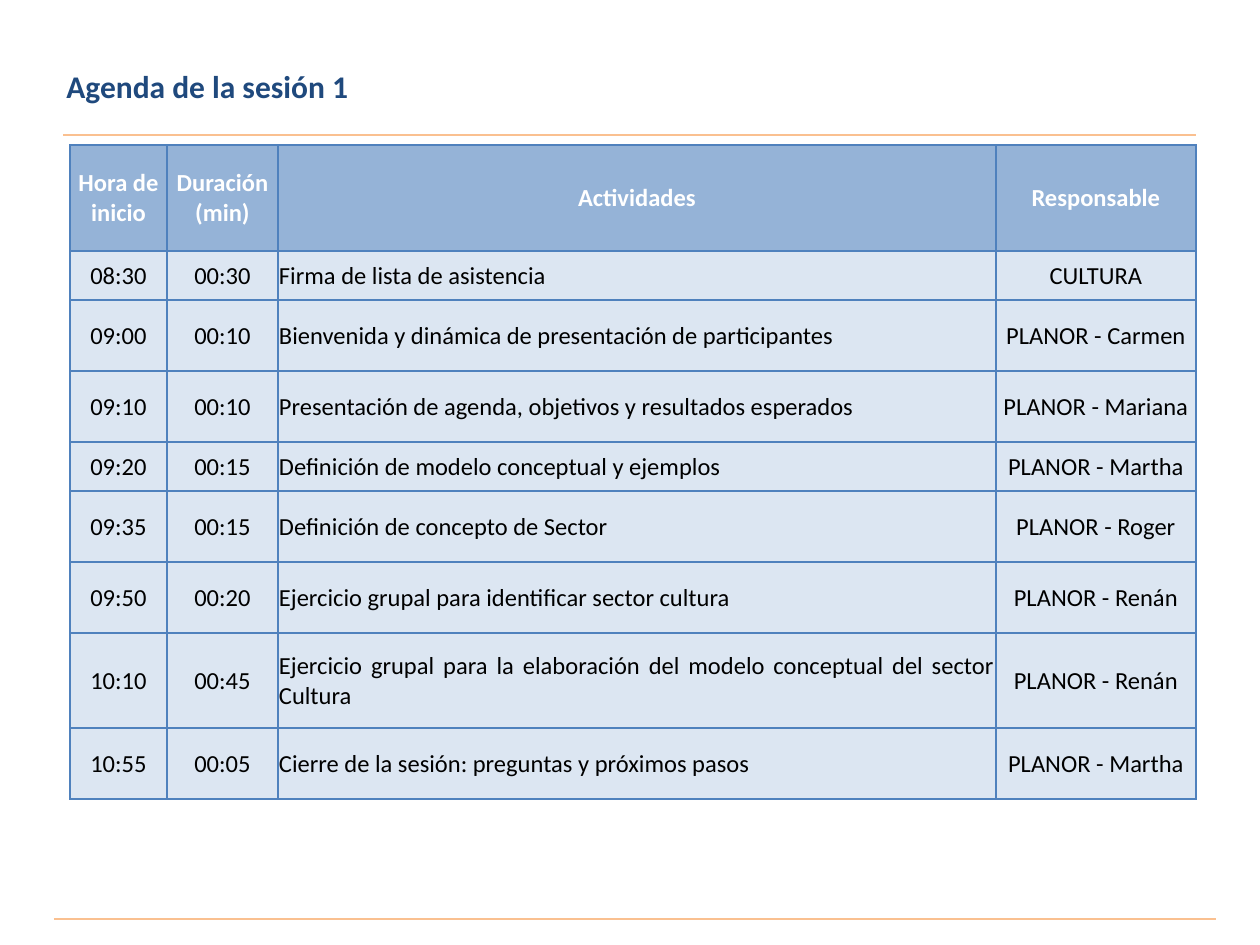
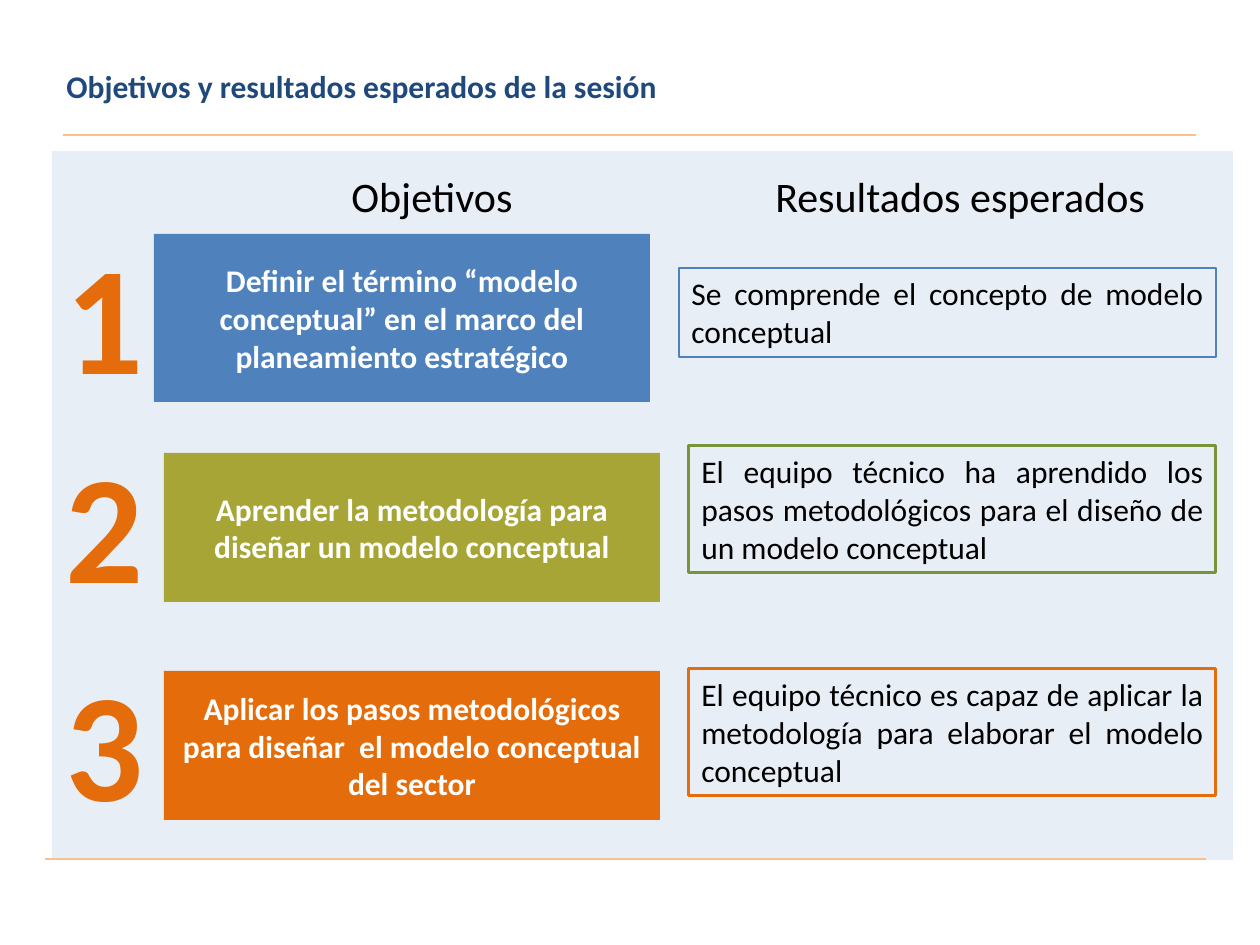
"""Build the agenda and objectives slides of a planning session."""
from lxml import etree
from pptx import Presentation
from pptx.dml.color import RGBColor
from pptx.enum.shapes import MSO_CONNECTOR, MSO_SHAPE
from pptx.enum.text import MSO_ANCHOR, PP_ALIGN
from pptx.oxml import parse_xml
from pptx.oxml.ns import nsdecls, qn
from pptx.util import Pt

RECTANGLE = MSO_SHAPE.RECTANGLE
STRAIGHT = MSO_CONNECTOR.STRAIGHT
MIDDLE, TOP = MSO_ANCHOR.MIDDLE, MSO_ANCHOR.TOP
LEFT, CENTER, JUSTIFY = PP_ALIGN.LEFT, PP_ALIGN.CENTER, PP_ALIGN.JUSTIFY

PX = 914400 / 126
FONT = "Calibri"
NAVY, BLUE, OLIVE, GREEN = "1F497D", "4F81BD", "A7A536", "77933C"
ORANGE, PEACH, WHITE, BLACK = "E46C0A", "FAC090", "FFFFFF", "000000"
HEADER_FILL, BODY_FILL = "95B3D7", "DCE6F2"
color = RGBColor.from_string


def px(*lengths):
    """Turn pixel lengths into EMU."""
    return [round(length * PX) for length in lengths]


def write_text(text_frame, text, size, font_color, bold=False, alignment=CENTER):
    """Fill a text frame with one formatted paragraph."""
    text_frame.text = text
    paragraph = text_frame.paragraphs[0]
    paragraph.alignment = alignment
    font = paragraph.runs[0].font
    font.name, font.size, font.bold = FONT, Pt(size), bold
    font.color.rgb = color(font_color)


presentation = Presentation()
presentation.slide_width, presentation.slide_height = px(1260, 945)
blank_layout = presentation.slide_layouts[6]
agenda_slide = presentation.slides.add_slide(blank_layout)
goals_slide = presentation.slides.add_slide(blank_layout)

panel = goals_slide.shapes.add_shape(RECTANGLE, *px(52, 151, 1181, 709))
panel.shadow.inherit = False
panel.fill.solid()
panel.fill.fore_color.rgb = color(BLUE)
panel.line.fill.background()
panel_color = panel.fill._xPr.find(qn("a:solidFill"))[0]
etree.SubElement(panel_color, qn("a:alpha"), val="13000")

titles = [
    (agenda_slide, "Agenda de la sesión 1", (54, 1216, 919)),
    (goals_slide, "Objetivos y resultados esperados de la sesión", (45, 1206, 859)),
]
for slide, title, footer_rule in titles:
    for start, end, y in (footer_rule, (63, 1196, 135)):
        rule = slide.shapes.add_connector(STRAIGHT, *px(start, y, end, y))
        rule.line.color.rgb = color(PEACH)
        rule.line.width = Pt(1.25)
        etree.SubElement(rule._element.spPr, qn("a:effectLst"))
    title_box = slide.shapes.add_textbox(*px(54, 56, 1133, 59))
    title_box.text_frame.word_wrap = True
    title_box.text_frame.vertical_anchor = MIDDLE
    write_text(title_box.text_frame, title, 18, NAVY, True, JUSTIFY)
    title_box.text_frame.paragraphs[0].space_before = Pt(4)

agenda = [
    ("Hora de inicio", "Duración (min)", "Actividades", "Responsable"),
    ("08:30", "00:30", "Firma de lista de asistencia", "CULTURA"),
    ("09:00", "00:10", "Bienvenida y dinámica de presentación de participantes",
     "PLANOR - Carmen"),
    ("09:10", "00:10", "Presentación de agenda, objetivos y resultados esperados",
     "PLANOR - Mariana"),
    ("09:20", "00:15", "Definición de modelo conceptual y ejemplos",
     "PLANOR - Martha"),
    ("09:35", "00:15", "Definición de concepto de Sector", "PLANOR - Roger"),
    ("09:50", "00:20", "Ejercicio grupal para identificar sector cultura",
     "PLANOR - Renán"),
    ("10:10", "00:45", "Ejercicio grupal para la elaboración del modelo conceptual "
     "del sector Cultura", "PLANOR - Renán"),
    ("10:55", "00:05", "Cierre de la sesión: preguntas y próximos pasos",
     "PLANOR - Martha"),
]
column_widths = px(97, 111, 718, 200)
row_heights = px(106, 49, 71, 71, 49, 71, 71, 95, 71)
table = agenda_slide.shapes.add_table(
    len(agenda), len(column_widths), *px(70, 145, 1126, 654)).table
for column, width in zip(table.columns, column_widths):
    column.width = width
for row, height in zip(table.rows, row_heights):
    row.height = height

for row_index, entries in enumerate(agenda):
    is_header = row_index == 0
    for column_index, entry in enumerate(entries):
        cell = table.cell(row_index, column_index)
        is_activity = column_index == 2 and not is_header
        write_text(cell.text_frame, entry, 14, WHITE if is_header else BLACK,
                   is_header, JUSTIFY if is_activity else CENTER)
        cell.vertical_anchor = MIDDLE
        cell.margin_left, cell.margin_right, cell.margin_top = px(1, 1, 1)
        cell.margin_bottom = 0
        cell_properties = cell._tc.get_or_add_tcPr()
        for side in ("lnL", "lnR", "lnT", "lnB"):
            cell_properties.append(parse_xml(
                f'<a:{side} {nsdecls("a")} w="12700"><a:solidFill>'
                f'<a:srgbClr val="{BLUE}"/></a:solidFill></a:{side}>'))
        cell.fill.solid()
        cell.fill.fore_color.rgb = color(HEADER_FILL if is_header else BODY_FILL)

labels = [
    ("Objetivos", (303, 164, 258, 63), 24, BLACK, False, CENTER),
    ("Resultados esperados", (763, 164, 418, 63), 24, BLACK, False, LEFT),
]
for number, top in enumerate((214, 423, 641), start=1):
    labels.append((str(number), (35, top, 139, 199), 88, ORANGE, True, CENTER))
for text, box, size, font_color, bold, alignment in labels:
    label = goals_slide.shapes.add_textbox(*px(*box))
    label.text_frame.word_wrap = True
    write_text(label.text_frame, text, size, font_color, bold, alignment)

goals = [
    ("Definir el término “modelo conceptual” en el marco del planeamiento estratégico",
     (154, 234, 496, 168), BLUE),
    ("Aprender la metodología para diseñar un modelo conceptual",
     (164, 453, 496, 149), OLIVE),
    ("Aplicar los pasos metodológicos para diseñar  el modelo conceptual del sector",
     (164, 671, 496, 149), ORANGE),
]
for text, box, fill_color in goals:
    goal = goals_slide.shapes.add_shape(RECTANGLE, *px(*box))
    goal.shadow.inherit = False
    goal.fill.solid()
    goal.fill.fore_color.rgb = color(fill_color)
    goal.line.fill.background()
    goal.text_frame.word_wrap = True
    goal.text_frame.vertical_anchor = MIDDLE
    write_text(goal.text_frame, text, 18, WHITE, True)

results = [
    ("Se comprende el concepto de modelo conceptual",
     (679, 268, 537, 89), BLUE, 1.5),
    ("El equipo técnico ha aprendido los pasos metodológicos para el diseño de "
     "un modelo conceptual", (689, 446, 527, 127), GREEN, 1.75),
    ("El equipo técnico es capaz de aplicar la metodología para elaborar el modelo "
     "conceptual", (689, 669, 527, 127), ORANGE, 1.75),
]
for text, box, line_color, line_width in results:
    result = goals_slide.shapes.add_shape(RECTANGLE, *px(*box))
    result.shadow.inherit = False
    result.fill.background()
    result.line.color.rgb = color(line_color)
    result.line.width = Pt(line_width)
    result.text_frame.word_wrap = True
    result.text_frame.vertical_anchor = TOP
    write_text(result.text_frame, text, 18, BLACK, False, JUSTIFY)

presentation.save("out.pptx")
